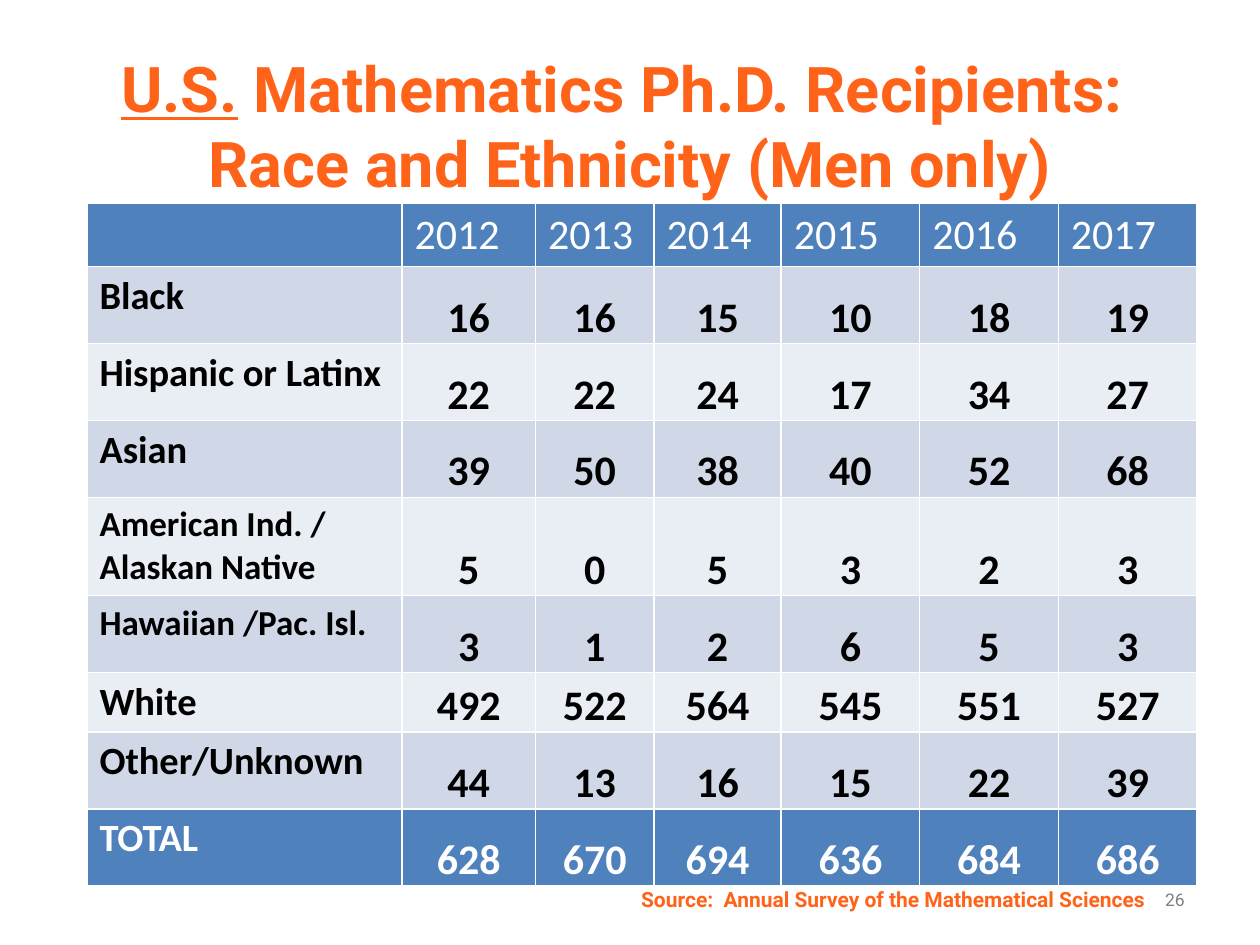
from pptx import Presentation
from pptx.dml.color import RGBColor
from pptx.enum.text import MSO_ANCHOR, PP_ALIGN
from pptx.util import Inches, Pt

LEFT, CENTER, RIGHT = PP_ALIGN.LEFT, PP_ALIGN.CENTER, PP_ALIGN.RIGHT
TOP, MIDDLE, BOTTOM = MSO_ANCHOR.TOP, MSO_ANCHOR.MIDDLE, MSO_ANCHOR.BOTTOM

ORANGE, BLUE, WHITE, BLACK, GRAY = "FF6319", "4F81BD", "FFFFFF", "000000", "808080"
BANDS = ["D0D8E8", "E9EDF4"]

COLUMN_WIDTHS = [2.5, 1.06, 0.94, 1.01, 1.1, 1.1, 1.1]
TITLE_ONLY_LAYOUT = 5

# label, label size, row height, counts by year
YEARS = ["2012", "2013", "2014", "2015", "2016", "2017"]
GROUPS = [
    ("Black", 22, 0.61, [16, 16, 15, 10, 18, 19]),
    ("Hispanic or Latinx", 22, 0.61, [22, 22, 24, 17, 34, 27]),
    ("Asian", 22, 0.61, [39, 50, 38, 40, 52, 68]),
    ("American Ind. / Alaskan Native", 20, 0.61, [5, 0, 5, 3, 2, 3]),
    ("Hawaiian /Pac. Isl.", 20, 0.61, [3, 1, 2, 6, 5, 3]),
    ("White", 22, 0.47, [492, 522, 564, 545, 551, 527]),
    ("Other/Unknown", 22, 0.61, [44, 13, 16, 15, 22, 39]),
    ("TOTAL", 22, 0.61, [628, 670, 694, 636, 684, 686]),
]
HEADER_HEIGHT = 0.47


def rgb(color):
    return RGBColor.from_string(color)


def add_text(paragraph, text, size, color, font="Calibri", bold=True,
             underline=False, align=LEFT):
    paragraph.alignment = align
    run = paragraph.add_run()
    run.text = text
    run.font.name = font
    run.font.size = Pt(size)
    run.font.bold = bold
    run.font.underline = underline
    run.font.color.rgb = rgb(color)


presentation = Presentation()
presentation.slide_width = Inches(10)
presentation.slide_height = Inches(7.5)
slide = presentation.slides.add_slide(presentation.slide_layouts[TITLE_ONLY_LAYOUT])

# Title
title = slide.shapes.title
title.left, title.top = Inches(0.28), Inches(0.34)
title.width, title.height = Inches(9.44), Inches(1.27)
title.text_frame.vertical_anchor = TOP
paragraph = title.text_frame.paragraphs[0]
title_format = {"size": 36, "color": ORANGE, "font": "Roboto", "align": CENTER}
add_text(paragraph, "U.S.", underline=True, **title_format)
add_text(paragraph, " Mathematics Ph.D. Recipients: ", **title_format)
paragraph.add_line_break()
add_text(paragraph, "Race and Ethnicity (Men only)", **title_format)

# Table of recipients
heights = [HEADER_HEIGHT] + [height for _, _, height, _ in GROUPS]
table = slide.shapes.add_table(
    len(heights), len(COLUMN_WIDTHS), Inches(0.69), Inches(1.61),
    Inches(sum(COLUMN_WIDTHS)), Inches(sum(heights))).table
for column, width in zip(table.columns, COLUMN_WIDTHS):
    column.width = Inches(width)
for row, height in zip(table.rows, heights):
    row.height = Inches(height)

for cell in table.rows[0].cells:
    cell.fill.solid()
    cell.fill.fore_color.rgb = rgb(BLUE)
for column_index, year in enumerate(YEARS, start=1):
    add_text(table.cell(0, column_index).text_frame.paragraphs[0], year, 24, WHITE,
             bold=False)

for row_index, (label, label_size, _, counts) in enumerate(GROUPS, start=1):
    is_total = label == "TOTAL"
    fill = BLUE if is_total else BANDS[(row_index - 1) % 2]
    color = WHITE if is_total else BLACK
    for column_index, value in enumerate([label] + counts):
        cell = table.cell(row_index, column_index)
        cell.fill.solid()
        cell.fill.fore_color.rgb = rgb(fill)
        paragraph = cell.text_frame.paragraphs[0]
        if column_index == 0:
            add_text(paragraph, label, label_size, color)
        else:
            cell.vertical_anchor = BOTTOM
            cell.margin_left = cell.margin_right = cell.margin_top = Inches(0.01)
            cell.margin_bottom = 0
            add_text(paragraph, str(value), 24, color, align=CENTER)

# Source line and page number
for text, box, size, color, bold in [
    ("Source:  Annual Survey of the Mathematical Sciences",
     (0.88, 6.79, 8.31, 0.7), 12, ORANGE, True),
    ("26", (7.17, 6.99, 2.33, 0.29), 10, GRAY, False),
]:
    text_frame = slide.shapes.add_textbox(*map(Inches, box)).text_frame
    text_frame.word_wrap = True
    text_frame.vertical_anchor = MIDDLE
    add_text(text_frame.paragraphs[0], text, size, color, font="Roboto", bold=bold,
             align=RIGHT)

presentation.save("out.pptx")
